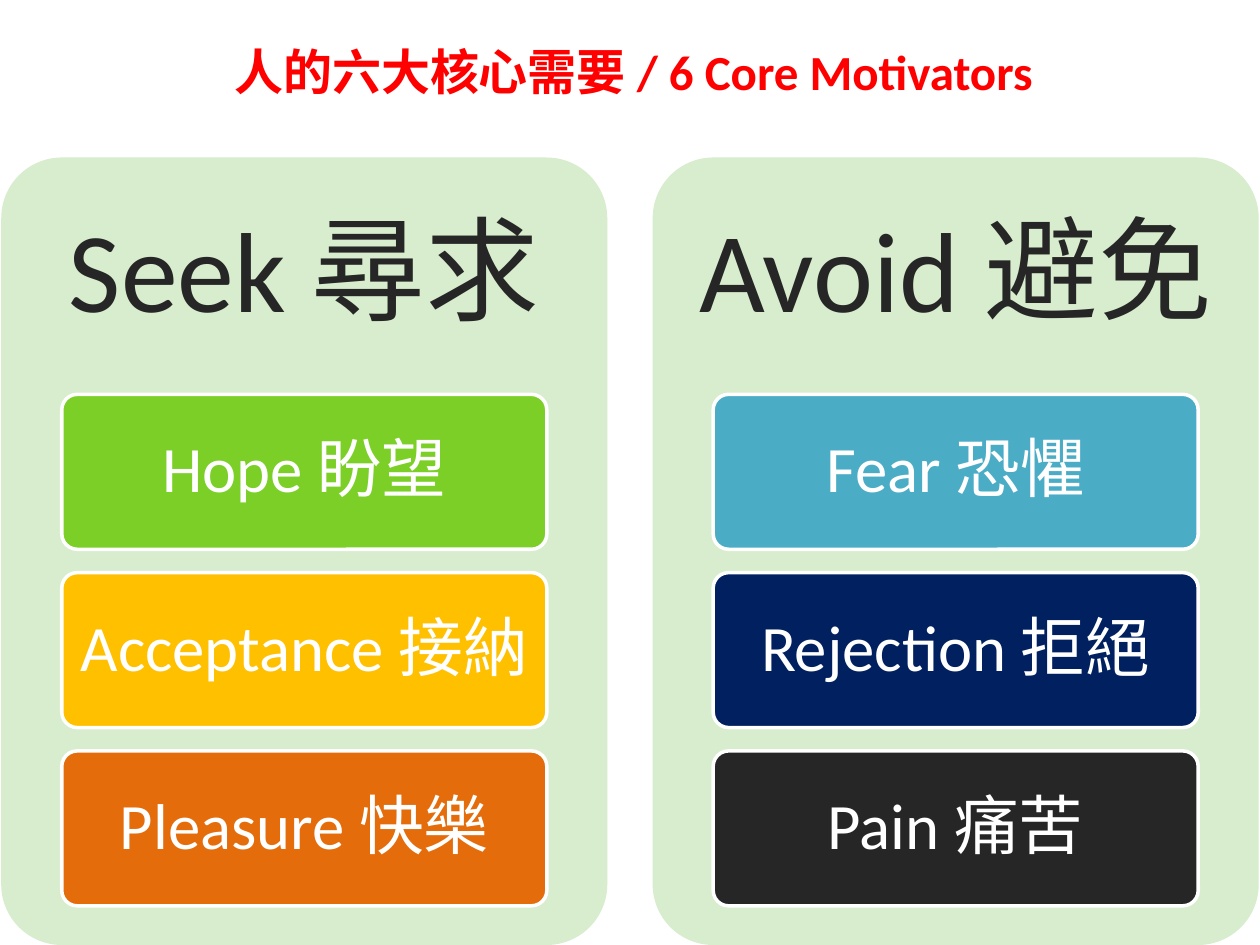
from dataclasses import dataclass

from pptx import Presentation
from pptx.dml.color import RGBColor
from pptx.enum.shapes import MSO_SHAPE as Shape
from pptx.enum.text import MSO_ANCHOR as Anchor, MSO_AUTO_SIZE as Fit, PP_ALIGN as Align
from pptx.util import Inches, Pt

COLORS = {
    "panel": "D7EDCD", "dark": "262626", "white": "FFFFFF", "red": "FF0000",
    "green": "7BCF27", "gold": "FFC000", "orange": "E46C0A",
    "teal": "4BACC6", "navy": "002060",
}
FONT = "Calibri"
TOP, WIDTH, HEIGHT = 1.25, 4.81, 6.25
HEAD = 1.88
INDENT, TILE_W, TILE_H, PITCH = 0.48, 3.85, 1.23, 1.415


@dataclass
class Tile:
    text: str
    color: str


@dataclass
class Panel:
    left: float
    head: str
    tiles: list[Tile]


PANELS = [
    Panel(0.01, "Seek 尋求", [
        Tile("Hope 盼望", "green"),
        Tile("Acceptance 接納", "gold"),
        Tile("Pleasure 快樂", "orange"),
    ]),
    Panel(5.18, "Avoid 避免", [
        Tile("Fear 恐懼", "teal"),
        Tile("Rejection 拒絕", "navy"),
        Tile("Pain 痛苦", "dark"),
    ]),
]


def color(name: str) -> RGBColor:
    return RGBColor.from_string(COLORS[name])


def add_run(para, text: str, size: float, ink: str, bold: bool = False) -> None:
    run = para.add_run()
    run.text = text
    font = run.font
    font.name, font.size, font.bold = FONT, Pt(size), bold
    font.color.rgb = color(ink)


def write(shape, text: str, size: float, ink: str, side: float, edge: float) -> None:
    """Centre text in a shape, with side and top/bottom margins in inches."""
    frame = shape.text_frame
    frame.word_wrap = True
    frame.vertical_anchor = Anchor.MIDDLE
    frame.margin_left = frame.margin_right = Inches(side)
    frame.margin_top = frame.margin_bottom = Inches(edge)
    para = frame.paragraphs[0]
    para.alignment = Align.CENTER
    para.line_spacing = 0.9
    add_run(para, text, size, ink)


def add_card(slide, left: float, top: float, width: float, height: float, fill: str):
    card = slide.shapes.add_shape(
        Shape.ROUNDED_RECTANGLE, Inches(left), Inches(top), Inches(width), Inches(height))
    card.adjustments[0] = 0.1
    card.shadow.inherit = False
    card.fill.solid()
    card.fill.fore_color.rgb = color(fill)
    card.line.fill.background()
    return card


def add_panel(slide, panel: Panel) -> None:
    add_card(slide, panel.left, TOP, WIDTH, HEIGHT, "panel")
    head = slide.shapes.add_textbox(
        Inches(panel.left), Inches(TOP), Inches(WIDTH), Inches(HEAD))
    write(head, panel.head, 65, "dark", 0.27, 0.27)
    for row, tile in enumerate(panel.tiles):
        card = add_card(slide, panel.left + INDENT, TOP + HEAD + row * PITCH,
                        TILE_W, TILE_H, tile.color)
        card.line.color.rgb = color("white")
        card.line.width = Pt(2)
        write(card, tile.text, 37, "white", 0.1, 0.08)


def set_title(slide) -> None:
    title = slide.shapes.title
    title.left, title.top = Inches(1.76), Inches(0.28)
    title.width, title.height = Inches(6.63), Inches(0.57)
    frame = title.text_frame
    frame.word_wrap = False
    frame.auto_size = Fit.SHAPE_TO_FIT_TEXT
    frame.vertical_anchor = Anchor.TOP
    para = frame.paragraphs[0]
    para.alignment = Align.LEFT
    add_run(para, "人的六大核心需要 / 6 Core Motivators", 28, "red", True)


def main() -> None:
    deck = Presentation()
    deck.slide_width, deck.slide_height = Inches(10), Inches(7.5)
    slide = deck.slides.add_slide(deck.slide_layouts[5])
    set_title(slide)
    for panel in PANELS:
        add_panel(slide, panel)
    deck.save("out.pptx")


if __name__ == "__main__":
    main()
